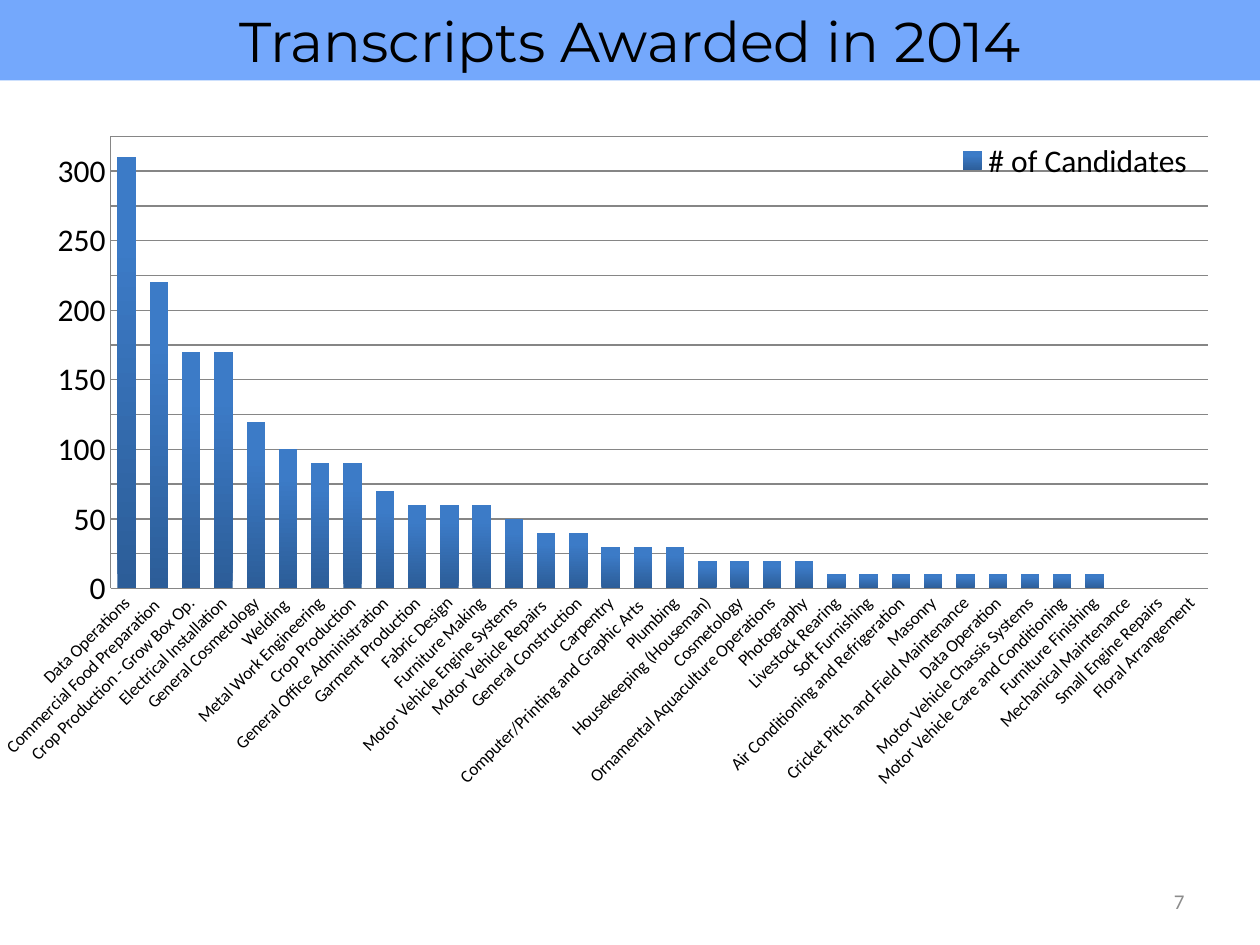
import pptx
import pptx.chart.data
import pptx.dml.color
import pptx.enum.chart
import pptx.enum.text
import pptx.util
from lxml import etree

Pt = pptx.util.Pt
RGBColor = pptx.dml.color.RGBColor
PP_ALIGN = pptx.enum.text.PP_ALIGN
MSO_ANCHOR = pptx.enum.text.MSO_ANCHOR
XL = pptx.enum.chart

BLACK = RGBColor(0, 0, 0)
BANNER_BLUE = RGBColor(0x74, 0xA8, 0xFC)
BAR_DARK = RGBColor(0x2C, 0x5D, 0x98)
BAR_LIGHT = RGBColor(0x3C, 0x7B, 0xC7)
GRID_GREY = RGBColor(0x86, 0x86, 0x86)
NUMBER_GREY = RGBColor(0x8C, 0x8C, 0x8C)
CHART_NS = "http://schemas.openxmlformats.org/drawingml/2006/chart"

CANDIDATES = [
    ("Data Operations", 310),
    ("Commercial Food Preparation ", 220),
    ("Crop Production - Grow Box Op.", 170),
    ("Electrical Installation", 170),
    ("General Cosmetology", 120),
    ("Welding ", 100),
    ("Metal Work Engineering", 90),
    ("Crop Production", 90),
    ("General Office Administration", 70),
    ("Garment Production", 60),
    ("Fabric Design", 60),
    ("Furniture Making", 60),
    ("Motor Vehicle Engine Systems", 50),
    ("Motor Vehicle Repairs ", 40),
    ("General Construction", 40),
    ("Carpentry", 30),
    ("Computer/Printing and Graphic Arts ", 30),
    ("Plumbing", 30),
    ("Housekeeping (Houseman)", 20),
    ("Cosmetology", 20),
    ("Ornamental Aquaculture Operations", 20),
    ("Photography", 20),
    ("Livestock Rearing", 10),
    ("Soft Furnishing", 10),
    ("Air Conditioning and Refrigeration", 10),
    ("Masonry", 10),
    ("Cricket Pitch and Field Maintenance", 10),
    ("Data Operation", 10),
    ("Motor Vehicle Chassis Systems", 10),
    ("Motor Vehicle Care and Conditioning", 10),
    ("Furniture Finishing", 10),
    ("Mechanical Maintenance", 0),
    ("Small Engine Repairs", 0),
    ("Floral Arrangement", 0),
]


def style_font(font, size, color, name):
    font.size = Pt(size)
    font.name = name
    font.color.rgb = color


def write_line(frame, text, align, size, color, name):
    frame.word_wrap = True
    frame.auto_size = pptx.enum.text.MSO_AUTO_SIZE.NONE
    frame.vertical_anchor = MSO_ANCHOR.MIDDLE
    para = frame.paragraphs[0]
    para.alignment = align
    span = para.add_run()
    span.text = text
    style_font(span.font, size, color, name)


def place_banner(page, left, top, width, height):
    box = page.shapes.title
    box.left, box.top, box.width, box.height = map(Pt, (left, top, width, height))
    box.fill.solid()
    box.fill.fore_color.rgb = BANNER_BLUE
    write_line(box.text_frame, "Transcripts Awarded in 2014",
               PP_ALIGN.CENTER, 32, BLACK, "Montserrat")


def place_page_number(page, left, top, width, height):
    box = page.shapes.add_textbox(*map(Pt, (left, top, width, height)))
    write_line(box.text_frame, "7", PP_ALIGN.RIGHT, 12, NUMBER_GREY, "Calibri")


def set_layout(parent, position, x, y, w, h, inner=False):
    """Fix a chart part at fractions of the chart area."""
    tag = f"{{{CHART_NS}}}"
    for old in parent.findall(tag + "layout"):
        parent.remove(old)
    layout = etree.Element(tag + "layout")
    manual = etree.SubElement(layout, tag + "manualLayout")
    settings = [("layoutTarget", "inner")] if inner else []
    settings += [("xMode", "edge"), ("yMode", "edge"),
                 ("x", x), ("y", y), ("w", w), ("h", h)]
    for name, value in settings:
        etree.SubElement(manual, tag + name).set("val", str(value))
    parent.insert(position, layout)


def format_axes(chart):
    values, courses = chart.value_axis, chart.category_axis
    values.minimum_scale, values.maximum_scale = 0, 325
    values.major_unit = 25
    values.has_major_gridlines = True
    for line in (values.major_gridlines.format.line,
                 values.format.line, courses.format.line):
        line.color.rgb = GRID_GREY
        line.width = Pt(0.75)
    for axis, size in ((values, 18), (courses, 10)):
        axis.major_tick_mark = XL.XL_TICK_MARK.NONE
        axis.minor_tick_mark = XL.XL_TICK_MARK.NONE
        style_font(axis.tick_labels.font, size, BLACK, "Calibri")
    # Slanted course names
    courses._element.txPr.bodyPr.set("rot", "-2700000")


def place_chart(page, left, top, width, height):
    data = pptx.chart.data.CategoryChartData()
    data.categories = [course for course, count in CANDIDATES]
    data.add_series("# of Candidates", [count for course, count in CANDIDATES])
    chart = page.shapes.add_chart(
        XL.XL_CHART_TYPE.COLUMN_CLUSTERED,
        *map(Pt, (left, top, width, height)), data).chart
    chart.has_title = False
    style_font(chart.font, 18, BLACK, "Calibri")
    format_axes(chart)

    # Bars, dark at the foot
    plot = chart.plots[0]
    plot.vary_by_categories = False
    plot.gap_width, plot.overlap = 75, -25
    bars = plot.series[0].format
    bars.fill.gradient()
    bars.fill.gradient_angle = 90
    for stop, color, position in zip(bars.fill.gradient_stops,
                                     (BAR_DARK, BAR_LIGHT), (0, 0.8)):
        stop.color.rgb = color
        stop.position = position
    bars.line.fill.background()

    # Legend over the top right of the plot
    chart.has_legend = True
    chart.legend.position = XL.XL_LEGEND_POSITION.BOTTOM
    chart.legend.include_in_layout = False
    style_font(chart.legend.font, 18, BLACK, "Calibri")
    set_layout(chart.legend._element, 1, 0.77, 0.03, 0.21, 0.05)
    plot_area = chart._chartSpace.chart.plotArea
    set_layout(plot_area, 0, 0.09, 0.025, 0.893, 0.552, inner=True)


def main():
    deck = pptx.Presentation()
    deck.slide_width, deck.slide_height = Pt(720), Pt(540)
    page = deck.slides.add_slide(deck.slide_layouts[5])
    place_chart(page, 0, 66.24, 702, 468)
    place_page_number(page, 516, 500.5, 168, 28.75)
    place_banner(page, 0, 0, 720, 46)
    deck.save("out.pptx")


if __name__ == "__main__":
    main()
